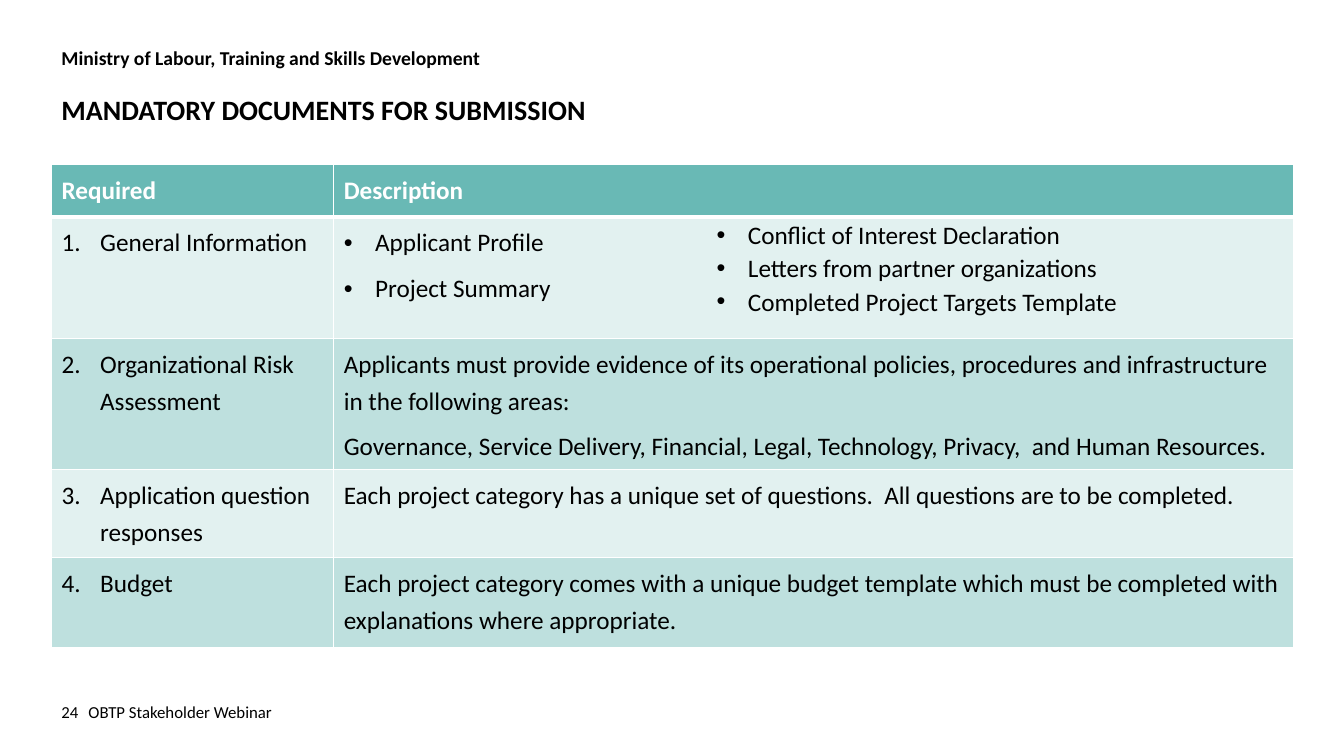
from lxml import etree
from pptx import Presentation
from pptx.dml.color import RGBColor
from pptx.enum import text as t
from pptx.oxml import ns
from pptx.util import Cm, Pt

THEME = {
    "font": "Calibri", "ink": "000000", "white": "FFFFFF",
    "head": "69B9B5", "bands": ("E2F1F0", "BEE0DE"),
    "small": 12, "org": 14, "body": 18, "title": 20,
}

HEADS = ("Required", "Description")
ROWS = [
    ("General Information", ["Applicant Profile", "Project Summary"]),
    ("Organizational Risk Assessment", [
        "Applicants must provide evidence of its operational policies, "
        "procedures and infrastructure in the following areas:",
        "Governance, Service Delivery, Financial, Legal, Technology, "
        "Privacy,  and Human Resources."]),
    ("Application question responses", [
        "Each project category has a unique set of questions.  "
        "All questions are to be completed."]),
    ("Budget", [
        "Each project category comes with a unique budget template which "
        "must be completed with explanations where appropriate."]),
]
EXTRA = ["Conflict of Interest Declaration",
         "Letters from partner organizations",
         "Completed Project Targets Template"]
LABELS = [
    ("Ministry of Labour, Training and Skills Development",
     (1.3, 1.02, 24.71, 0.86), "org", True, "TOP", None),
    ("MANDATORY DOCUMENTS FOR SUBMISSION",
     (1.3, 2.31, 27.41, 1.45), "title", True, "TOP", 0.9),
    ("24", (1.3, 17.42, 1.9, 1.02), "small", False, "MIDDLE", None),
    ("OBTP Stakeholder Webinar",
     (1.98, 17.42, 10.31, 1.02), "small", False, "MIDDLE", None),
]
WIDTHS = (7.11, 24.18)
HEIGHTS = (1.32, 3.07, 3.3, 2.21, 2.29)
DOT, STEP = 0.79, 0.97


def mark(para, indent, tag, **attrs):
    props = para._p.get_or_add_pPr()
    props.set("marL", str(Cm(indent)))
    props.set("indent", str(-Cm(indent)))
    face = "Arial" if tag == "a:buChar" else "+mj-lt"
    etree.SubElement(props, ns.qn("a:buFont"), typeface=face)
    etree.SubElement(props, ns.qn(tag), **attrs)


def style(para, size="body", ink="ink", bold=False, line=None, after=None):
    if line:
        para.line_spacing = line
    if after is not None:
        para.space_after = Pt(after)
    font = para.font
    font.name, font.size, font.bold = THEME["font"], Pt(THEME[size]), bold
    font.color.rgb = RGBColor.from_string(THEME[ink])


def write(frame, lines, dots=False, number=None, **look):
    for i, line in enumerate(lines):
        para = frame.paragraphs[0] if i == 0 else frame.add_paragraph()
        para.text = line
        if dots:
            mark(para, DOT, "a:buChar", char="•")
        if number:
            mark(para, STEP, "a:buAutoNum", type="arabicPeriod", startAt=str(number))
        style(para, **look)


def add_box(slide, area, lines, anchor="TOP", **look):
    frame = slide.shapes.add_textbox(*map(Cm, area)).text_frame
    frame.word_wrap = True
    frame.vertical_anchor = t.MSO_ANCHOR[anchor]
    write(frame, lines, **look)


def paint(cell, color, base=1, top=1):
    props = cell._tc.get_or_add_tcPr()
    for i, (side, width) in enumerate(zip("LRTB", (1, 1, top, base))):
        edge = etree.Element(ns.qn("a:ln" + side), w=str(Pt(width)))
        fill = etree.SubElement(edge, ns.qn("a:solidFill"))
        etree.SubElement(fill, ns.qn("a:srgbClr"), val=THEME["white"])
        props.insert(i, edge)
    cell.fill.solid()
    cell.fill.fore_color.rgb = RGBColor.from_string(color)


def add_grid(slide):
    area = map(Cm, (1.3, 4.14, sum(WIDTHS), sum(HEIGHTS)))
    grid = slide.shapes.add_table(len(HEIGHTS), len(WIDTHS), *area).table
    grid.first_row = grid.horz_banding = False
    for col, width in zip(grid.columns, WIDTHS):
        col.width = Cm(width)
    for row, height in zip(grid.rows, HEIGHTS):
        row.height = Cm(height)
    look = {"line": 1.2, "after": 6}
    for c, head in enumerate(HEADS):
        cell = grid.cell(0, c)
        write(cell.text_frame, [head], ink="white", bold=True, **look)
        paint(cell, THEME["head"], base=3)
    for r, (name, lines) in enumerate(ROWS, 1):
        left, right = grid.cell(r, 0), grid.cell(r, 1)
        write(left.text_frame, [name], number=r, **look)
        write(right.text_frame, lines, dots=r == 1, **look)
        for cell in (left, right):
            paint(cell, THEME["bands"][(r - 1) % 2], top=3 if r == 1 else 1)


def main():
    deck = Presentation()
    deck.slide_width, deck.slide_height = Cm(33.87), Cm(19.05)
    slide = deck.slides.add_slide(deck.slide_layouts[6])
    add_grid(slide)
    add_box(slide, (17.81, 5.33, 11.81, 2.74), EXTRA, dots=True, line=1.1)
    for words, area, size, bold, anchor, line in LABELS:
        add_box(slide, area, [words], anchor, size=size, bold=bold, line=line)
    deck.save("out.pptx")


if __name__ == "__main__":
    main()
